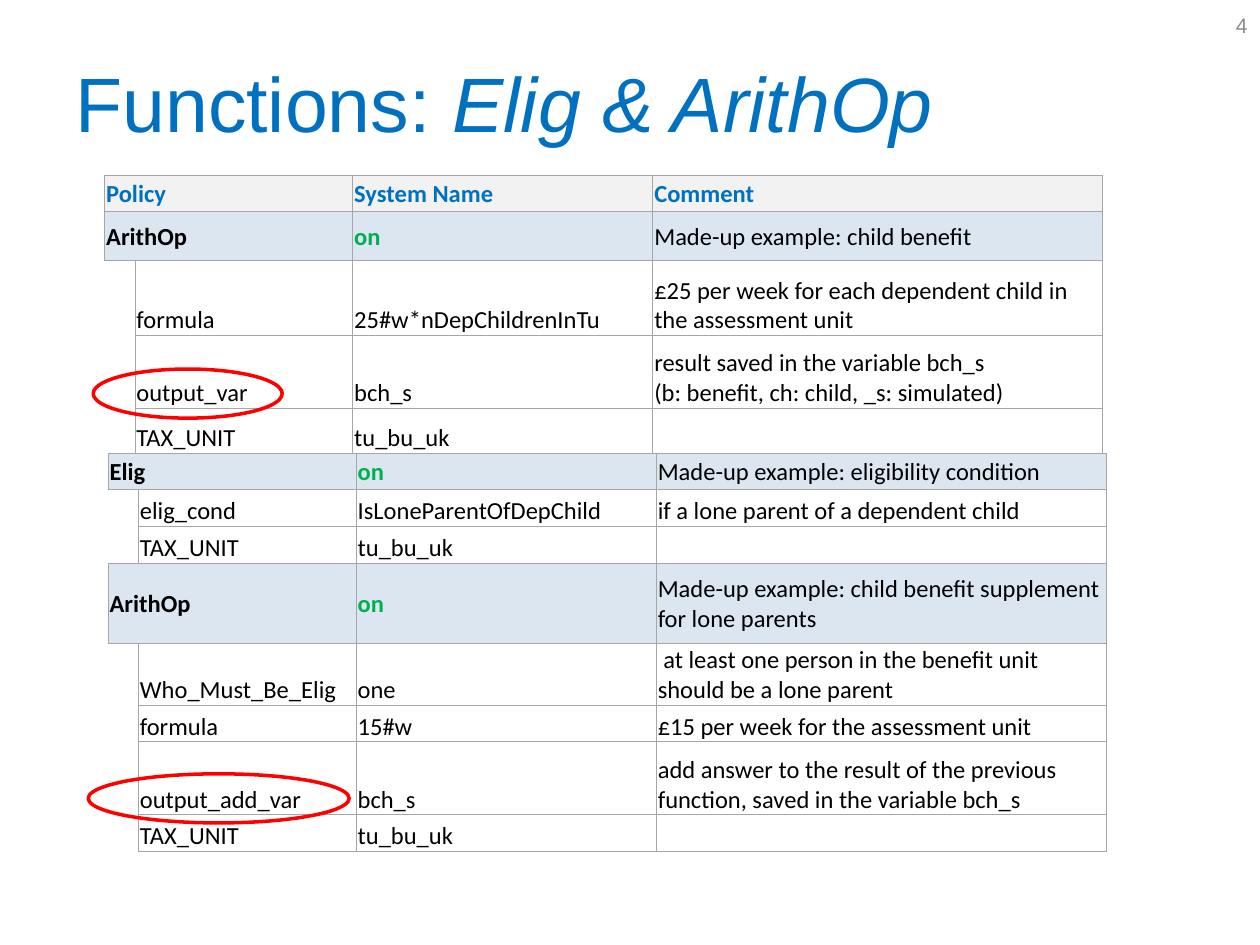
from lxml.etree import SubElement
from pptx import Presentation
from pptx.dml.color import RGBColor
from pptx.enum.shapes import MSO_SHAPE
from pptx.enum.text import MSO_ANCHOR, PP_ALIGN
from pptx.oxml.ns import qn
from pptx.util import Cm, Pt

BLUE, GREEN, RED, BLACK = "0070C0", "00B050", "FF0000", "000000"
GREY, BORDER = "8C8C8C", "A6A6A6"
FILLS = {"heading": "F2F2F2", "function": "DCE6F1", "parameter": "FFFFFF"}

TITLE = [("Functions: ", False), ("Elig & ArithOp", True)]
COLUMNS = (0.61, 4.39, 6.05, 9.07)

# Each row: kind, height in cm, policy, system name, comment
BENEFIT = [
    ("heading", 0.74, "Policy", "System Name", "Comment"),
    ("function", 0.97, "ArithOp", "on", "Made-up example: child benefit"),
    ("parameter", 1.52, "formula", "25#w*nDepChildrenInTu",
     "£25 per week for each dependent child in the assessment unit"),
    ("parameter", 1.47, "output_var", "bch_s",
     "result saved in the variable bch_s\v(b: benefit, ch: child, _s: simulated)"),
    ("parameter", 0.91, "TAX_UNIT", "tu_bu_uk", ""),
]
SUPPLEMENT = [
    ("function", 0.74, "Elig", "on", "Made-up example: eligibility condition"),
    ("parameter", 0.74, "elig_cond", "IsLoneParentOfDepChild",
     "if a lone parent of a dependent child"),
    ("parameter", 0.74, "TAX_UNIT", "tu_bu_uk", ""),
    ("function", 1.63, "ArithOp", "on",
     "Made-up example: child benefit supplement for lone parents"),
    ("parameter", 1.23, "Who_Must_Be_Elig", "one",
     " at least one person in the benefit unit should be a lone parent"),
    ("parameter", 0.74, "formula", "15#w", "£15 per week for the assessment unit"),
    ("parameter", 1.47, "output_add_var", "bch_s",
     "add answer to the result of the previous function, saved in the variable bch_s"),
    ("parameter", 0.74, "TAX_UNIT", "tu_bu_uk", ""),
]
TABLES = [(2.18, 9.13, SUPPLEMENT), (2.11, 3.53, BENEFIT)]
HIGHLIGHTS = [(1.88, 7.44, 3.81, 0.99), (1.78, 15.6, 5.26, 0.99)]


def color(hex_text):
    return RGBColor.from_string(hex_text)


def format_run(run, size, hex_text, font="Arial", bold=False, italic=False):
    run.font.name, run.font.size = font, Pt(size)
    run.font.bold, run.font.italic = bold, italic
    run.font.color.rgb = color(hex_text)


def set_borders(cell, visible):
    """Draw the sides named in visible (letters of LRTB) and hide the others."""
    properties = cell._tc.get_or_add_tcPr()
    for side in "LRTB":
        line = SubElement(properties, qn(f"a:ln{side}"), w=str(Pt(0.5)))
        if side in visible:
            fill = SubElement(line, qn("a:solidFill"))
            SubElement(fill, qn("a:srgbClr"), val=BORDER)
        else:
            SubElement(line, qn("a:noFill"))


def fill_cell(cell, text, kind, column):
    cell.margin_left = cell.margin_right = cell.margin_top = Cm(0.03)
    cell.margin_bottom = 0
    cell.vertical_anchor = MSO_ANCHOR.BOTTOM if kind == "parameter" else MSO_ANCHOR.MIDDLE
    cell.fill.solid()
    cell.fill.fore_color.rgb = color(FILLS[kind])
    paragraph = cell.text_frame.paragraphs[0]
    if not text:
        SubElement(paragraph._p, qn("a:endParaRPr"), sz="1400")
        return
    paragraph.text = text
    bold = kind == "heading" or (kind == "function" and column < 3)
    text_color = BLACK
    if kind == "heading":
        text_color = BLUE
    elif kind == "function" and column == 2:
        text_color = GREEN
    for run in paragraph.runs:
        format_run(run, 14, text_color, "Calibri", bold)


def add_policy_table(slide, left, top, rows):
    height = sum(row[1] for row in rows)
    table = slide.shapes.add_table(len(rows), len(COLUMNS), Cm(left), Cm(top),
                                   Cm(sum(COLUMNS)), Cm(height)).table
    table.first_row = table.horz_banding = False
    for column, width in zip(table.columns, COLUMNS):
        column.width = Cm(width)
    for index, (kind, row_height, policy, system, comment) in enumerate(rows):
        table.rows[index].height = Cm(row_height)
        is_parameter = kind == "parameter"
        texts = ("", policy, system, comment) if is_parameter else (policy, "", system, comment)
        for column, text in enumerate(texts):
            cell = table.cell(index, column)
            sides = "LRTB"
            if is_parameter and column == 0:
                sides = "R"
                if rows[index - 1][0] != "parameter":
                    sides += "T"
                if index + 1 < len(rows) and rows[index + 1][0] != "parameter":
                    sides += "B"
            set_borders(cell, sides)
            fill_cell(cell, text, kind, column)
        if not is_parameter:
            table.cell(index, 0).merge(table.cell(index, 1))


def add_title(slide):
    title = slide.shapes.title
    title.left, title.top, title.width, title.height = Cm(1.27), Cm(0.76), Cm(22.86), Cm(2.57)
    title.text_frame.vertical_anchor = MSO_ANCHOR.MIDDLE
    paragraph = title.text_frame.paragraphs[0]
    paragraph.alignment = PP_ALIGN.LEFT
    for text, italic in TITLE:
        run = paragraph.add_run()
        run.text = text
        format_run(run, 44, BLUE, italic=italic)


def add_page_number(slide):
    box = slide.shapes.add_textbox(Cm(19.48), 0, Cm(5.92), Cm(1.02))
    frame = box.text_frame
    frame.word_wrap = True
    frame.vertical_anchor = MSO_ANCHOR.MIDDLE
    frame.text = "4"
    paragraph = frame.paragraphs[0]
    paragraph.alignment = PP_ALIGN.RIGHT
    format_run(paragraph.runs[0], 12, GREY)


def main():
    presentation = Presentation()
    presentation.slide_width, presentation.slide_height = Cm(25.4), Cm(19.05)
    slide = presentation.slides.add_slide(presentation.slide_layouts[5])
    add_title(slide)
    add_page_number(slide)
    for left, top, rows in TABLES:
        add_policy_table(slide, left, top, rows)
    for bounds in HIGHLIGHTS:
        ellipse = slide.shapes.add_shape(MSO_SHAPE.OVAL, *map(Cm, bounds))
        ellipse.shadow.inherit = False
        ellipse.fill.background()
        ellipse.line.color.rgb = color(RED)
        ellipse.line.width = Pt(2)
    presentation.save("out.pptx")


if __name__ == "__main__":
    main()
